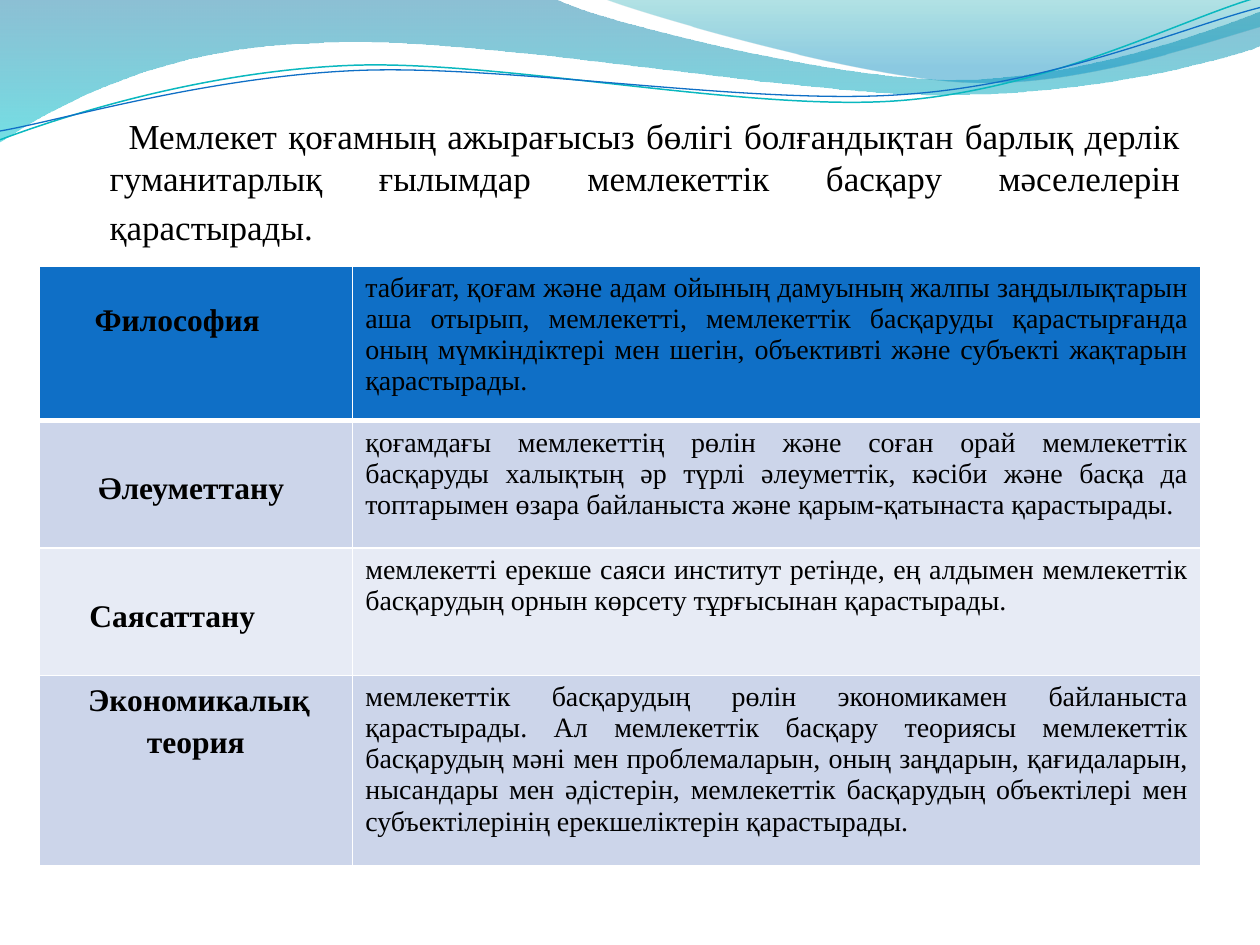
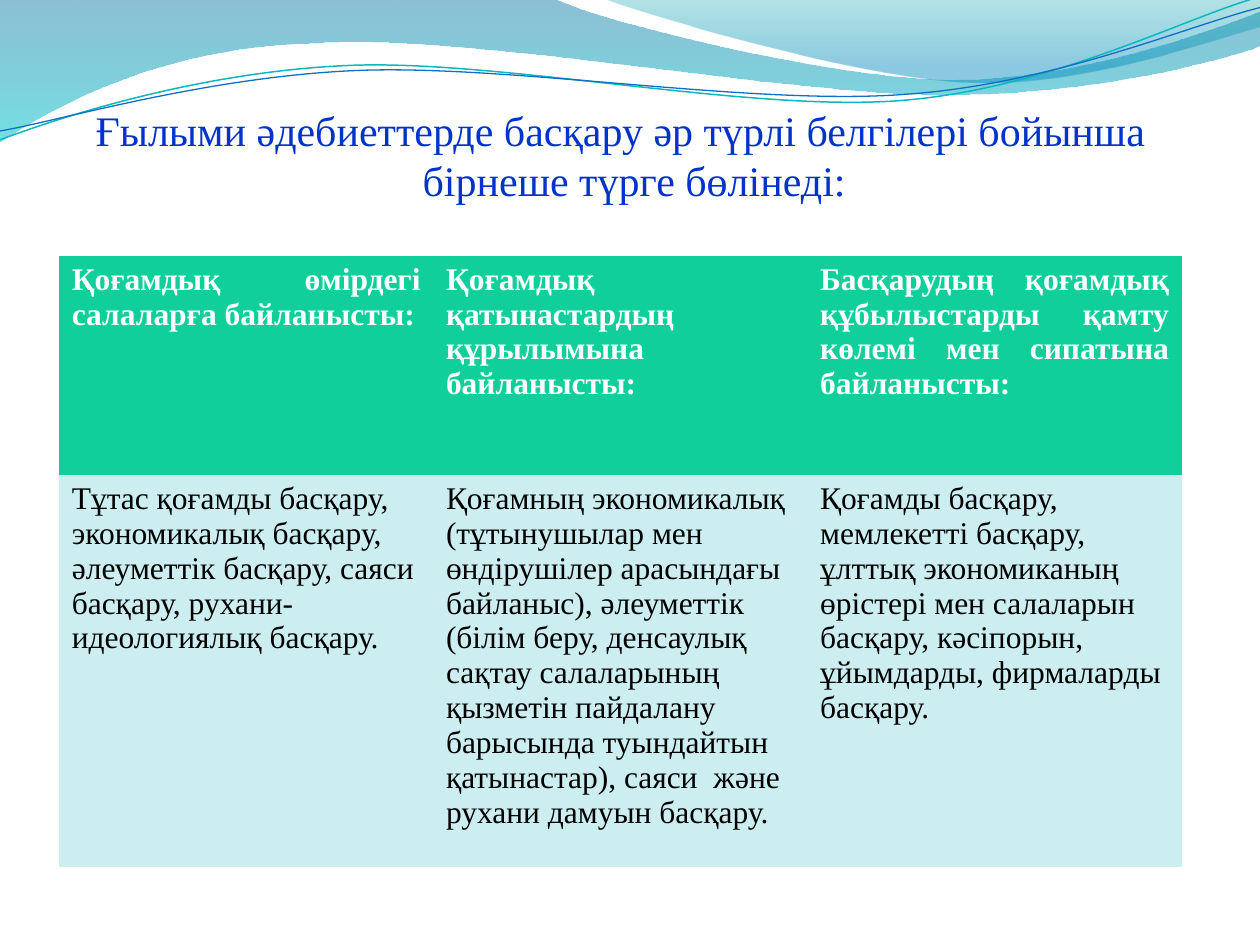
import pptx
import pptx.util
import pptx.dml.color
import pptx.enum.text
import pptx.oxml
import pptx.oxml.ns
import lxml.etree

Inches = pptx.util.Inches
Pt = pptx.util.Pt
RGBColor = pptx.dml.color.RGBColor
Align = pptx.enum.text.PP_ALIGN
qn = pptx.oxml.ns.qn

FONT = "Times New Roman"
BLACK = RGBColor(0x00, 0x00, 0x00)
WHITE = RGBColor(0xFF, 0xFF, 0xFF)
TITLE_BLUE = RGBColor(0x00, 0x33, 0xCC)
BLUE = RGBColor(0x0F, 0x6F, 0xC6)
TEAL = RGBColor(0x0A, 0xB8, 0xBF)
GREEN = RGBColor(0x10, 0xCF, 0x9B)
PALE_TEAL = RGBColor(0xCC, 0xEE, 0xF1)
BAND_DARK = RGBColor(0xCC, 0xD5, 0xEA)
BAND_LIGHT = RGBColor(0xE7, 0xEB, 0xF5)

# Each wave: start point, then steps of one point (line) or three (curve)
LEFT_WAVE = [(0, 0), [(4.4, -0.01)],
             [(4.76, 0.17), (6.64, 0.63), (7.58, 0.63)],
             [(8.53, 0.63), (9.58, 0.26), (10, 0.09)], [(10.01, 0.36)],
             [(9.83, 0.44), (8.7, 0.76), (7.46, 0.75)],
             [(6.22, 0.75), (3.82, 0.28), (2.57, 0.34)],
             [(1.29, 0.36), (0.46, 0.83), (-0.01, 1.13)]]
RIGHT_WAVE = [(4.79, -0.01), [(5.09, 0.11), (6.82, 0.62), (7.69, 0.65)],
              [(8.56, 0.69), (9.61, 0.32), (10, 0.21)], [(10, 0)]]
TEAL_LINE = [(0, 1.11), [(0.48, 0.93), (1.58, 0.57), (2.77, 0.52)],
             [(3.95, 0.47), (5.93, 0.89), (7.13, 0.8)],
             [(8.33, 0.71), (9.38, 0.15), (9.98, -0.02)]]
BLUE_LINE = [(0, 1.04), [(0.47, 0.96), (1.64, 0.61), (2.83, 0.56)],
             [(4.03, 0.51), (5.97, 0.84), (7.17, 0.75)],
             [(8.36, 0.67), (9.41, 0.21), (10, 0.06)]]

# Sciences: name, indent, top margin, fill, what the science studies
SCIENCES = [
    ("Философия", 0.34, 0.3, BLUE,
     "табиғат, қоғам және адам ойының дамуының жалпы заңдылықтарын аша отырып, "
     "мемлекетті, мемлекеттік басқаруды қарастырғанда оның мүмкіндіктері мен шегін, "
     "объективті және субъекті жақтарын қарастырады."),
    ("Әлеуметтану", 0.37, 0.4, BAND_DARK,
     "қоғамдағы мемлекеттің рөлін және соған орай мемлекеттік басқаруды халықтың "
     "әр түрлі әлеуметтік, кәсіби және басқа да топтарымен өзара байланыста және "
     "қарым-қатынаста қарастырады."),
    ("Саясаттану", 0.3, 0.41, BAND_LIGHT,
     "мемлекетті ерекше саяси институт ретінде, ең алдымен мемлекеттік басқарудың "
     "орнын көрсету тұрғысынан қарастырады."),
    ("Экономикалық теория", 0, 0.01, BAND_DARK,
     "мемлекеттік басқарудың рөлін экономикамен байланыста қарастырады. Ал "
     "мемлекеттік басқару теориясы мемлекеттік басқарудың мәні мен проблемаларын, "
     "оның заңдарын, қағидаларын, нысандары мен әдістерін, мемлекеттік басқарудың "
     "объектілері мен субъектілерінің ерекшеліктерін қарастырады."),
]

# Kinds of management: basis, kinds
MANAGEMENT_KINDS = [
    ("Қоғамдық өмірдегі салаларға байланысты:",
     "Тұтас қоғамды басқару, экономикалық басқару, әлеуметтік басқару, саяси "
     "басқару, рухани-идеологиялық басқару."),
    ("Қоғамдық қатынастардың құрылымына байланысты:",
     "Қоғамның экономикалық (тұтынушылар мен өндірушілер арасындағы байланыс), "
     "әлеуметтік (білім беру, денсаулық сақтау салаларының қызметін пайдалану "
     "барысында туындайтын қатынастар), саяси  және рухани дамуын басқару."),
    ("Басқарудың қоғамдық құбылыстарды қамту көлемі мен сипатына байланысты:",
     "Қоғамды басқару, мемлекетті басқару, ұлттық экономиканың өрістері мен "
     "салаларын басқару, кәсіпорын, ұйымдарды, фирмаларды басқару."),
]


def add_outline(page, steps, close):
    """Join the end points of the steps, then bend the curved steps."""
    ends = [(Inches(x), Inches(y)) for x, y in [steps[0]] + [s[-1] for s in steps[1:]]]
    builder = page.shapes.build_freeform(*ends[0])
    builder.add_line_segments(ends[1:], close=close)
    shape = builder.convert_to_shape()
    shape.shadow.inherit = False
    segments = list(shape.element.spPr.iter(qn("a:lnTo")))
    for segment, step in zip(segments, steps[1:]):
        if len(step) == 3:
            curve = lxml.etree.Element(qn("a:cubicBezTo"))
            for x, y in step:
                point = lxml.etree.SubElement(curve, qn("a:pt"))
                point.set("x", str(Inches(x) - shape.left))
                point.set("y", str(Inches(y) - shape.top))
            segment.getparent().replace(segment, curve)
    return shape


def add_wave(page, steps, stops):
    """Filled wave; stops are (position, colour, opacity in percent)."""
    wave = add_outline(page, steps, True)
    wave.line.fill.background()
    wave.fill.gradient()
    wave.fill.gradient_angle = 270
    for stop, (position, colour, _) in zip(wave.fill.gradient_stops, stops):
        stop.position = position
        stop.color.rgb = colour
    colours = wave.element.spPr.iter(qn("a:srgbClr"))
    for node, (_, _, opacity) in zip(list(colours), stops):
        lxml.etree.SubElement(node, qn("a:alpha")).set("val", str(opacity * 1000))
    return wave


def add_wave_line(page, steps, colour, width):
    line = add_outline(page, steps, False)
    line.fill.background()
    line.line.color.rgb = colour
    line.line.width = Pt(width)
    return line


def add_shared_waves(page):
    """Draw the waves and move them to the layout, behind its placeholders."""
    waves = [
        add_wave(page, LEFT_WAVE, [(0, RGBColor(0x00, 0x74, 0xA1), 45),
                                   (1, RGBColor(0x00, 0xC6, 0xCF), 55)]),
        add_wave(page, RIGHT_WAVE, [(0, RGBColor(0x00, 0xA1, 0xA9), 30),
                                    (0.8, RGBColor(0x00, 0x8B, 0xBF), 45)]),
        add_wave_line(page, TEAL_LINE, TEAL, 0.85),
        add_wave_line(page, BLUE_LINE, BLUE, 0.75),
    ]
    for position, wave in enumerate(waves, start=2):
        page.slide_layout.shapes.element.insert(position, wave.element)


def format_text(frame, size, colour, align, bold=False, left=0, first=0):
    """Format the only paragraph; left and first are indents in inches."""
    para = frame.paragraphs[0]
    para.alignment = align
    properties = para._p.get_or_add_pPr()
    properties.set("marL", str(Inches(left)))
    properties.set("indent", str(Inches(first)))
    for span in para.runs:
        span.font.name = FONT
        span.font.size = Pt(size)
        span.font.bold = bold
        span.font.color.rgb = colour
    return para


def set_title(page, text, place, size, colour, align, first):
    title = page.shapes.title
    title.left, title.top, title.width, title.height = map(Inches, place)
    frame = title.text_frame
    frame.text = text
    frame.word_wrap = True
    frame.auto_size = pptx.enum.text.MSO_AUTO_SIZE.NONE
    frame.vertical_anchor = pptx.enum.text.MSO_ANCHOR.TOP
    return format_text(frame, size, colour, align, left=0.3, first=first)


def add_table(page, left, top, widths, heights):
    table = page.shapes.add_table(len(heights), len(widths), Inches(left), Inches(top),
                                  Inches(sum(widths)), Inches(sum(heights))).table
    table.first_row = table.horz_banding = False
    for column, width in zip(table.columns, widths):
        column.width = Inches(width)
    for row, height in zip(table.rows, heights):
        row.height = Inches(height)
    return table


def set_borders(cell, widths):
    """Widths in points for left, right, top, bottom; 0 hides the border."""
    properties = cell._tc.get_or_add_tcPr()
    for position, (side, width) in enumerate(zip("LRTB", widths)):
        border = lxml.etree.Element(qn("a:ln" + side), w=str(Pt(width)))
        if width:
            fill = lxml.etree.SubElement(border, qn("a:solidFill"))
            lxml.etree.SubElement(fill, qn("a:srgbClr")).set("val", str(WHITE))
        else:
            lxml.etree.SubElement(border, qn("a:noFill"))
        properties.insert(position, border)


def fill_cell(cell, text, fill, borders, *style, **options):
    cell.text_frame.text = text
    cell.fill.solid()
    cell.fill.fore_color.rgb = fill
    set_borders(cell, borders)
    return format_text(cell.text_frame, *style, **options)


def build_sciences(page):
    para = set_title(page, "Мемлекет қоғамның ажырағысыз бөлігі болғандықтан барлық дерлік "
                     "гуманитарлық ғылымдар мемлекеттік басқару мәселелерін қарастырады.",
                     (0.47, 0.86, 9, 5.86), 20, BLACK, Align.JUSTIFY, 0.15)
    # A larger closing space makes the last line taller
    closing = para.add_run()
    closing.text = " "
    closing.font.size = Pt(24)
    table = add_table(page, 0.31, 2.11, [2.49, 6.73], [1.23, 1.01, 1.01, 1.51])
    last = len(SCIENCES) - 1
    for row, (name, indent, margin, fill, study) in enumerate(SCIENCES):
        borders = (1, 1, 3 if row == 1 else 1, 3 if row == 0 else 1)
        name_cell, study_cell = table.cell(row, 0), table.cell(row, 1)
        name_cell.margin_top = Inches(margin)
        para = fill_cell(name_cell, name, fill, borders, 18, BLACK,
                         Align.CENTER if row == last else Align.LEFT, bold=True,
                         left=indent, first=0.05 if row == last else 0)
        if row == last:
            para.line_spacing = 1.2
        fill_cell(study_cell, study, fill, borders, 16, BLACK, Align.JUSTIFY)


def build_management_kinds(page):
    set_title(page, "Ғылыми әдебиеттерде басқару әр түрлі белгілері бойынша "
              "бірнеше түрге бөлінеді: ",
              (0.47, 0.78, 8.91, 6.72), 24, TITLE_BLUE, Align.CENTER, -0.3)
    table = add_table(page, 0.47, 2.03, [2.97] * 3, [1.74, 3.11])
    no_borders = (0, 0, 0, 0)
    for column, (basis, kinds) in enumerate(MANAGEMENT_KINDS):
        fill_cell(table.cell(0, column), basis, GREEN, no_borders,
                  18, WHITE, Align.JUSTIFY, bold=True)
        fill_cell(table.cell(1, column), kinds, PALE_TEAL, no_borders,
                  18, BLACK, Align.LEFT)


def main():
    deck = pptx.Presentation()
    deck.slide_width, deck.slide_height = Inches(10), Inches(7.5)
    title_only = deck.slide_layouts[5]
    pages = [deck.slides.add_slide(title_only) for _ in range(2)]
    add_shared_waves(pages[0])
    build_sciences(pages[0])
    build_management_kinds(pages[1])
    deck.save("out.pptx")


if __name__ == "__main__":
    main()
